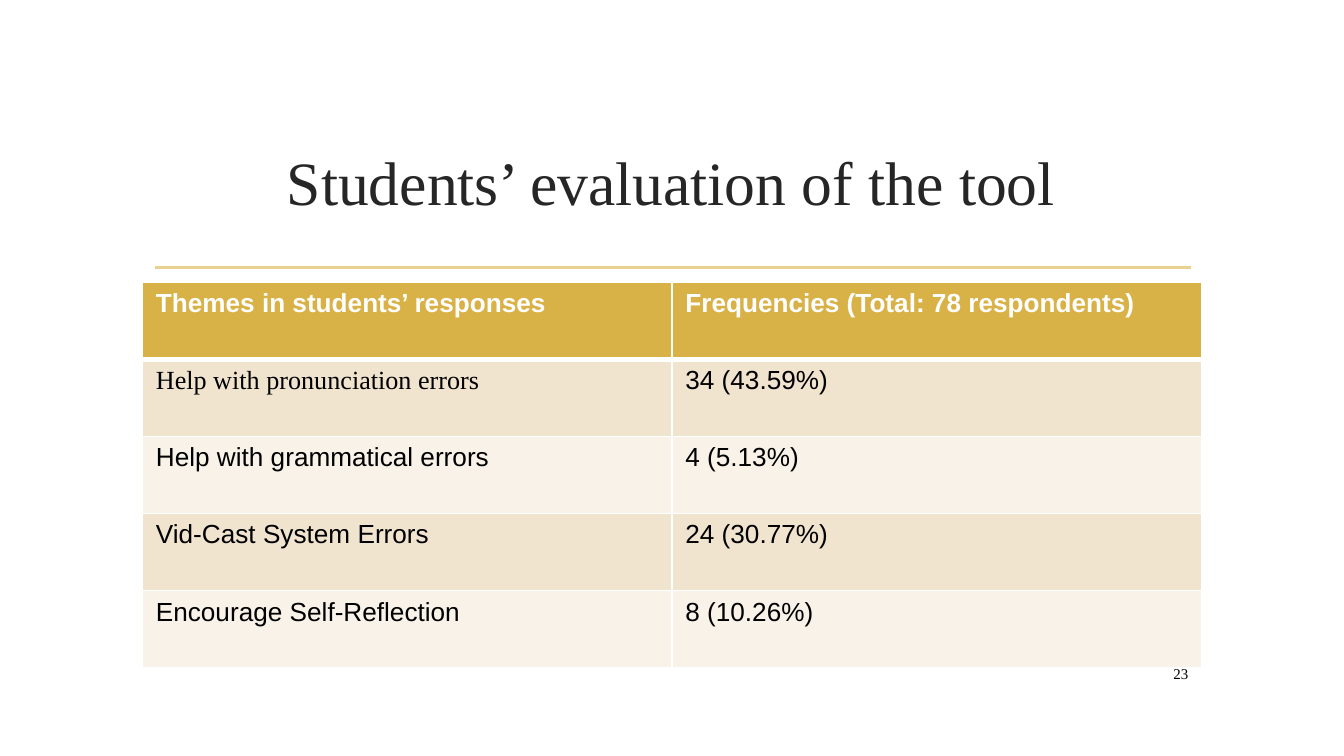
from dataclasses import dataclass

import lxml.etree
import pptx
import pptx.dml.color
import pptx.enum.shapes
import pptx.enum.text
import pptx.oxml.ns
import pptx.util

Inches = pptx.util.Inches
Pt = pptx.util.Pt
Align = pptx.enum.text.PP_ALIGN
Anchor = pptx.enum.text.MSO_ANCHOR
qn = pptx.oxml.ns.qn


@dataclass(frozen=True)
class Theme:
    serif: str = "Times New Roman"
    sans: str = "Arial"
    title_size: float = 33
    table_size: float = 14
    number_size: float = 8
    title_color: str = "262626"
    text_color: str = "000000"
    white: str = "FFFFFF"
    rule: str = "E8D191"
    header: str = "D9B247"
    bands: tuple = ("F1E4CF", "F8F2E9")


THEME = Theme()
SLIDE_WIDTH = 10
HEADINGS = ("Themes in students’ responses", "Frequencies (Total: 78 respondents)")
RESPONSES = (
    ("Help with pronunciation errors", "34 (43.59%)"),
    ("Help with grammatical errors", "4 (5.13%)"),
    ("Vid-Cast System Errors", "24 (30.77%)"),
    ("Encourage Self-Reflection", "8 (10.26%)"),
)


def rgb(value):
    return pptx.dml.color.RGBColor.from_string(value)


def set_font(paragraph, name, size, color, bold=False):
    paragraph.font.name = name
    paragraph.font.size = Pt(size)
    paragraph.font.color.rgb = rgb(color)
    paragraph.font.bold = bold


def add_text(slide, box, text, size, color, alignment):
    shape = slide.shapes.add_textbox(*map(Inches, box))
    frame = shape.text_frame
    frame.word_wrap = True
    frame.vertical_anchor = Anchor.MIDDLE
    paragraph = frame.paragraphs[0]
    paragraph.text = text
    paragraph.alignment = alignment
    set_font(paragraph, THEME.serif, size, color)


def add_title(slide, box):
    left, top, width, height = box
    add_text(slide, box, "Students’ evaluation of the tool",
             THEME.title_size, THEME.title_color, Align.CENTER)
    rule_left, rule_top, rule_width = left + 0.09, top + height + 0.11, 7.71
    rule = slide.shapes.add_connector(
        pptx.enum.shapes.MSO_CONNECTOR.STRAIGHT,
        Inches(rule_left), Inches(rule_top),
        Inches(rule_left + rule_width), Inches(rule_top))
    rule.line.color.rgb = rgb(THEME.rule)
    rule.line.width = Pt(1.25)
    lxml.etree.SubElement(rule._element.spPr, qn("a:effectLst"))


def set_borders(cell, widths):
    properties = cell._tc.get_or_add_tcPr()
    for index, (side, width) in enumerate(widths.items()):
        border = lxml.etree.Element(qn(f"a:{side}"), w=str(Pt(width)))
        fill = lxml.etree.SubElement(border, qn("a:solidFill"))
        lxml.etree.SubElement(fill, qn("a:srgbClr"), val=THEME.white)
        properties.insert(index, border)


def add_response_table(slide, box):
    rows = (HEADINGS, *RESPONSES)
    table = slide.shapes.add_table(len(rows), len(HEADINGS), *map(Inches, box)).table
    for row_index, values in enumerate(rows):
        is_header = row_index == 0
        background = THEME.header if is_header else THEME.bands[(row_index - 1) % 2]
        for column_index, value in enumerate(values):
            cell = table.cell(row_index, column_index)
            cell.fill.solid()
            cell.fill.fore_color.rgb = rgb(background)
            set_borders(cell, {"lnL": 1, "lnR": 1,
                               "lnT": 3 if row_index == 1 else 1,
                               "lnB": 3 if is_header else 1})
            paragraph = cell.text_frame.paragraphs[0]
            paragraph.text = value
            is_first_theme = (row_index, column_index) == (1, 0)
            set_font(paragraph, THEME.serif if is_first_theme else THEME.sans,
                     THEME.table_size, THEME.white if is_header else THEME.text_color,
                     is_header)


def add_slide_number(slide, box):
    add_text(slide, box, "23", THEME.number_size, THEME.text_color, Align.RIGHT)


def main():
    presentation = pptx.Presentation()
    presentation.slide_width = Inches(SLIDE_WIDTH)
    presentation.slide_height = Inches(SLIDE_WIDTH * 9 / 16)
    slide = presentation.slides.add_slide(presentation.slide_layouts[6])
    add_title(slide, (1.06, 0.81, 7.87, 1.07))
    add_response_table(slide, (1.06, 2.1, 7.88, 2.87))
    add_slide_number(slide, (8.49, 4.9, 0.45, 0.23))
    presentation.save("out.pptx")


if __name__ == "__main__":
    main()
